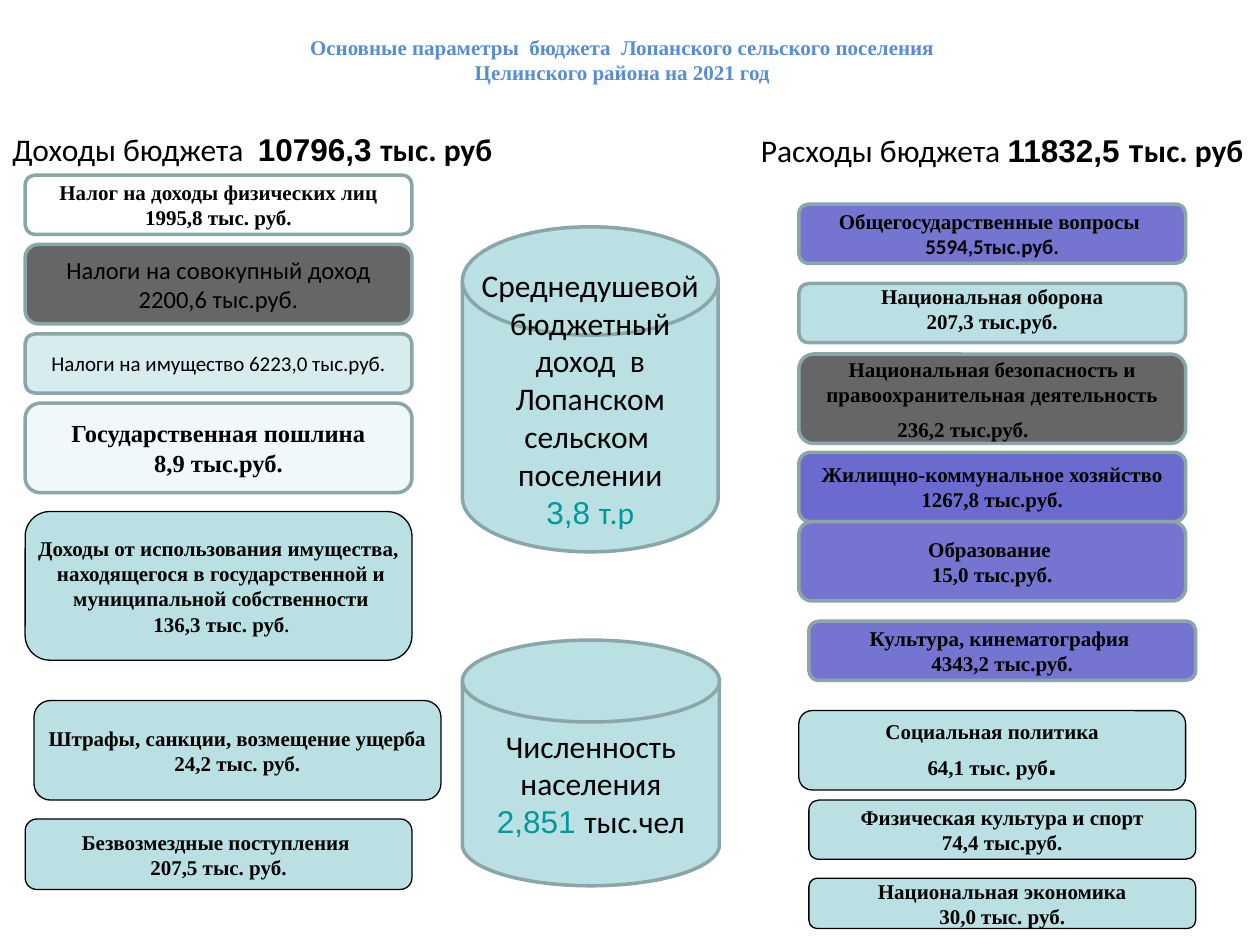
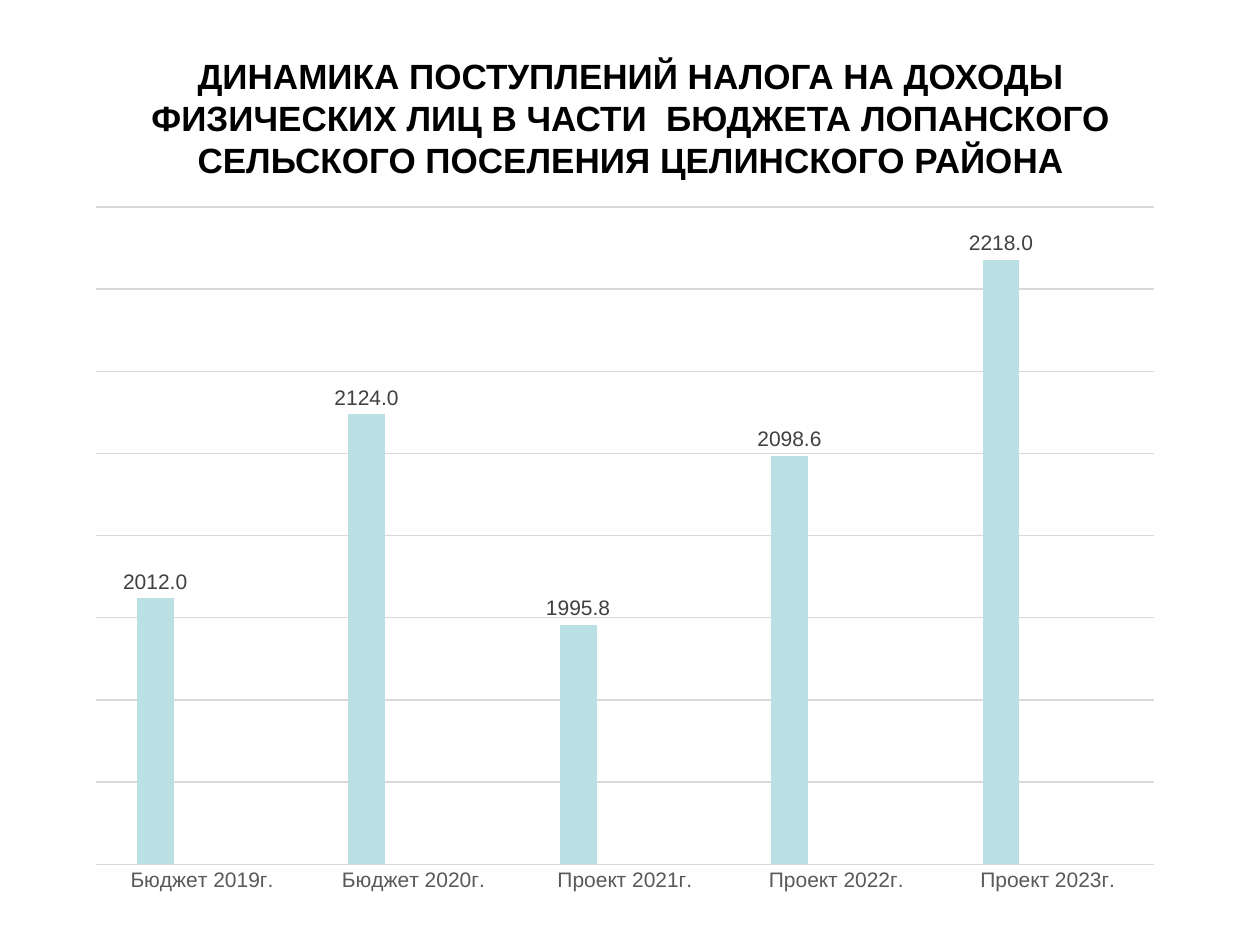
from dataclasses import dataclass, replace

from pptx import Presentation
from pptx.chart.data import CategoryChartData
from pptx.dml.color import RGBColor
from pptx.enum import chart as ch, shapes, text
from pptx.util import Inches, Pt

BLACK = RGBColor(0x00, 0x00, 0x00)
WHITE = RGBColor(0xFF, 0xFF, 0xFF)
AQUA = RGBColor(0xBB, 0xE0, 0xE3)
AQUA_LIGHT = RGBColor(0xD6, 0xEC, 0xEE)
AQUA_PALE = RGBColor(0xF0, 0xF8, 0xF9)
GRAY = RGBColor(0x66, 0x66, 0x66)
VIOLET = RGBColor(0x75, 0x75, 0xD1)
VIOLET_DARK = RGBColor(0x6B, 0x6B, 0xCF)
NAVY = RGBColor(0x33, 0x33, 0x99)
FRAME = RGBColor(0x8A, 0xA6, 0xA8)
TEAL = RGBColor(0x00, 0x99, 0x99)
TITLE_BLUE = RGBColor(0x55, 0x8E, 0xD5)
GRID = RGBColor(0xD9, 0xD9, 0xD9)
AXIS_TEXT = RGBColor(0x59, 0x59, 0x59)
LABEL_TEXT = RGBColor(0x40, 0x40, 0x40)

SERIF, SANS, BODY = "Times New Roman", "Arial", "Calibri"


@dataclass(frozen=True)
class Style:
    size: float = 12
    font: str = SERIF
    bold: bool = True
    color: RGBColor = BLACK


ITEM = Style()
ITEM_LARGE = Style(14)
ITEM_PLAIN = Style(12, BODY, False)
ITEM_PLAIN_LARGE = Style(14, BODY, False)
BIG = Style(18, BODY, False)
BIG_BOLD = Style(18, BODY)
BIG_FIGURE = Style(18, SANS)
ACCENT = Style(18, SANS, False, TEAL)

Line = str | list[tuple[str, Style]]


@dataclass(frozen=True)
class Block:
    """A filled budget block; a thick frame marks the main items."""
    left: float
    top: float
    height: float
    lines: list[Line]
    fill: RGBColor = AQUA
    framed: bool = True
    style: Style = ITEM
    width: float = 3.07
    preset: shapes.MSO_SHAPE = shapes.MSO_SHAPE.ROUNDED_RECTANGLE
    bottom_inset: float = 0.05


LEFT, RIGHT, RIGHT_SHIFTED, MIDDLE = 0.2, 6.34, 6.42, 3.67
DISK = shapes.MSO_SHAPE.FLOWCHART_MAGNETIC_DISK

INCOME = [
    Block(LEFT, 1.39, 0.47, ["Налог на доходы физических лиц 1995,8 тыс. руб."], WHITE),
    Block(LEFT, 1.94, 0.63, ["Налоги на совокупный доход", "2200,6 тыс.руб."],
          GRAY, style=ITEM_PLAIN_LARGE),
    Block(LEFT, 2.65, 0.47, ["Налоги на имущество 6223,0 тыс.руб."],
          AQUA_LIGHT, style=ITEM_PLAIN),
    Block(LEFT, 3.2, 0.71, ["Государственная пошлина", "8,9 тыс.руб."],
          AQUA_PALE, style=ITEM_LARGE),
    Block(LEFT, 4.06, 1.18,
          ["Доходы от использования имущества,", " находящегося в государственной и",
           " муниципальной собственности",
           [(" 136,3 тыс. руб", ITEM), (".", Style(10))]], framed=False),
    Block(0.27, 5.56, 0.79, ["Штрафы, санкции, возмещение ущерба", "24,2 тыс. руб."],
          framed=False, width=3.23),
    Block(LEFT, 6.5, 0.56, ["Безвозмездные поступления ", "207,5 тыс. руб."], framed=False),
]

EXPENSES = [
    Block(RIGHT, 1.62, 0.47, ["Общегосударственные вопросы ",
                              [("5594,5тыс.руб.", Style(12, BODY))]], VIOLET),
    Block(RIGHT, 2.25, 0.47, ["Национальная оборона", "207,3 тыс.руб."], bottom_inset=0.12),
    Block(RIGHT, 3.59, 0.55, ["Жилищно-коммунальное хозяйство 1267,8 тыс.руб."], VIOLET_DARK),
    Block(RIGHT, 4.14, 0.63, ["Образование ", "15,0 тыс.руб."], VIOLET),
    Block(RIGHT_SHIFTED, 4.93, 0.47, ["Культура, кинематография ", "4343,2 тыс.руб."], VIOLET),
    Block(RIGHT, 5.64, 0.63, ["Социальная политика",
                              [("64,1 тыс. руб", ITEM), (".", BIG_FIGURE)]], framed=False),
    Block(RIGHT_SHIFTED, 6.35, 0.47, ["Физическая культура и спорт", "74,4 тыс.руб."],
          framed=False),
    Block(RIGHT_SHIFTED, 6.97, 0.4, ["Национальная экономика", "30,0 тыс. руб."], framed=False),
]

SECURITY = Block(RIGHT, 2.81, 0.71,
                 ["Национальная безопасность и правоохранительная деятельность",
                  "236,2 тыс.руб."], GRAY)

INDICATORS = [
    Block(MIDDLE, 1.8, 2.58,
          ["Среднедушевой бюджетный доход  в Лопанском", "сельском ", "поселении",
           [("3,8 ", ACCENT), ("т.р", replace(ACCENT, font=BODY))]],
          style=BIG, width=2.03, preset=DISK, bottom_inset=0.34),
    Block(MIDDLE, 5.08, 1.95,
          ["Численность населения", [("2,851 ", ACCENT), ("тыс.чел", BIG)]],
          style=BIG, width=2.04, preset=DISK),
]

YEARS = ["Бюджет 2019г.", "Бюджет 2020г.", "Проект 2021г.", "Проект 2022г.", "Проект 2023г."]
INCOME_TAX = [2012, 2124, 1995.8, 2098.6, 2218]


def style_font(font, style: Style) -> None:
    font.size, font.name, font.bold = Pt(style.size), style.font, style.bold
    font.color.rgb = style.color


def write(tf, lines: list[Line], style: Style, *, align=text.PP_ALIGN.CENTER,
          anchor=text.MSO_ANCHOR.MIDDLE, wrap: bool = True) -> None:
    """Put one paragraph per line; a line is plain text or styled pieces."""
    tf.word_wrap, tf.vertical_anchor = wrap, anchor
    for i, line in enumerate(lines):
        p = tf.paragraphs[0] if i == 0 else tf.add_paragraph()
        p.alignment = align
        for words, run_style in [(line, style)] if isinstance(line, str) else line:
            r = p.add_run()
            r.text = words
            style_font(r.font, run_style)


def add_text(s, left: float, top: float, width: float, height: float,
             lines: list[Line], style: Style, **options) -> None:
    sp = s.shapes.add_textbox(Inches(left), Inches(top), Inches(width), Inches(height))
    write(sp.text_frame, lines, style, **options)


def add_block(s, block: Block):
    sp = s.shapes.add_shape(block.preset, Inches(block.left), Inches(block.top),
                            Inches(block.width), Inches(block.height))
    sp.shadow.inherit = False
    sp.fill.solid()
    sp.fill.fore_color.rgb = block.fill
    sp.line.color.rgb = FRAME if block.framed else BLACK
    sp.line.width = Pt(2 if block.framed else 0.75)
    sp.text_frame.margin_bottom = Inches(block.bottom_inset)
    write(sp.text_frame, block.lines, block.style, wrap=block.framed)
    return sp


def add_security_block(s) -> None:
    """The sum stands left of the block's centre, a little apart from the name."""
    p = add_block(s, SECURITY).text_frame.paragraphs[1]
    p.alignment = text.PP_ALIGN.LEFT
    p.space_before = Pt(5.5)
    p._p.get_or_add_pPr().set("marL", str(Inches(0.65)))


def add_heading(s, left: float, top: float, width: float, pieces: Line) -> None:
    add_text(s, left, top, width, 0.4, [pieces], BIG,
             align=text.PP_ALIGN.LEFT, anchor=text.MSO_ANCHOR.TOP)


def build_parameters(s) -> None:
    add_text(s, 0.51, 0.23, 8.86, 0.48,
             ["Основные параметры  бюджета  Лопанского сельского поселения",
              "Целинского района на 2021 год"], replace(ITEM, color=TITLE_BLUE))
    for block in INCOME + INDICATORS + EXPENSES:
        add_block(s, block)
    add_security_block(s)
    add_heading(s, 0, 0.98, 4.92, [("Доходы бюджета  ", BIG), ("10796,3 ", BIG_FIGURE),
                                   ("тыс. руб", BIG_BOLD)])
    add_heading(s, 5.94, 0.99, 4.06, [("Расходы бюджета ", BIG), ("11832,5 т", BIG_FIGURE),
                                      ("ыс. руб", BIG_BOLD)])


def add_tax_chart(s) -> None:
    data = CategoryChartData(number_format="0.0")
    data.categories = YEARS
    empty = [None] * len(YEARS)
    for name, values in zip(("Series 1", "Series 2", "Series 3"), (INCOME_TAX, empty, empty)):
        data.add_series(name, values)
    chart = s.shapes.add_chart(ch.XL_CHART_TYPE.COLUMN_CLUSTERED, Inches(0.59), Inches(1.53),
                               Inches(8.74), Inches(5.66), data).chart
    chart.has_legend = chart.has_title = False
    style_font(chart.font, Style(10, SANS, False))

    plot = chart.plots[0]
    plot.gap_width, plot.overlap, plot.vary_by_categories = 219, -27, False
    for series, color in zip(plot.series, (AQUA, NAVY, WHITE)):
        series.format.fill.solid()
        series.format.fill.fore_color.rgb = color
        labels = series.data_labels
        labels.show_value = True
        labels.position = ch.XL_LABEL_POSITION.OUTSIDE_END
        labels.number_format, labels.number_format_is_linked = "0.0", False
        style_font(labels.font, Style(12, SANS, False, LABEL_TEXT))

    years, amounts = chart.category_axis, chart.value_axis
    for axis in (years, amounts):
        axis.major_tick_mark = axis.minor_tick_mark = ch.XL_TICK_MARK.NONE
        style_font(axis.tick_labels.font, Style(12, SANS, False, AXIS_TEXT))
    amounts.tick_label_position = ch.XL_TICK_LABEL_POSITION.NONE
    amounts.minimum_scale, amounts.maximum_scale, amounts.major_unit = 1850, 2250, 50
    amounts.format.line.fill.background()
    for line in (years.format.line, amounts.major_gridlines.format.line):
        line.color.rgb = GRID
        line.width = Pt(0.75)


def build_dynamics(s) -> None:
    add_text(s, 0.5, 0.31, 9.01, 1.24,
             ["ДИНАМИКА ПОСТУПЛЕНИЙ НАЛОГА НА ДОХОДЫ ФИЗИЧЕСКИХ ЛИЦ В ЧАСТИ  БЮДЖЕТА "
              "ЛОПАНСКОГО СЕЛЬСКОГО ПОСЕЛЕНИЯ ЦЕЛИНСКОГО РАЙОНА"], Style(20, SANS))
    add_tax_chart(s)


def main() -> None:
    prs = Presentation()
    prs.slide_width, prs.slide_height = Inches(10), Inches(7.5)
    for build in (build_parameters, build_dynamics):
        build(prs.slides.add_slide(prs.slide_layouts[6]))
    prs.save("out.pptx")


if __name__ == "__main__":
    main()
